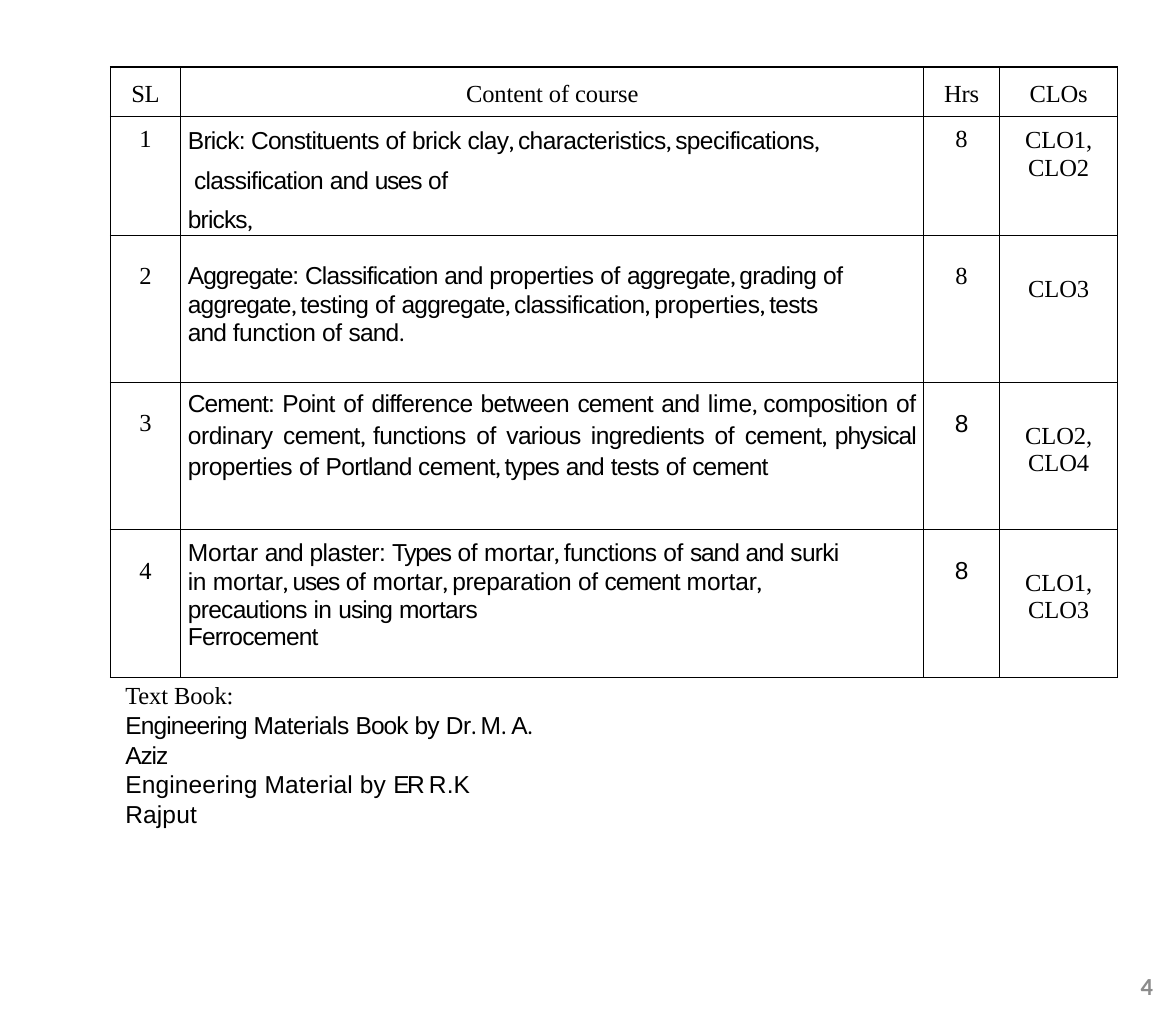
from dataclasses import dataclass

from lxml.etree import SubElement
from pptx import Presentation
from pptx.dml.color import RGBColor
from pptx.enum.text import PP_ALIGN
from pptx.oxml.ns import qn
from pptx.util import Inches, Pt


@dataclass(frozen=True)
class Theme:
    """Colours, fonts and type size of the slide."""
    ink: str = "000000"
    muted: str = "8C8C8C"
    serif: str = "Times New Roman"
    sans: str = "Arial"
    marks: str = "Cambria"
    number: str = "Calibri"
    size: float = 20
    rule: float = 1


THEME = Theme()
COLUMNS = [0.8, 8.42, 0.86, 1.34]
ROWS = [0.56, 1.35, 1.67, 1.67, 1.67]
HEADINGS = [("SL", -0.3), ("Content of course", -0.1), ("Hrs", -0.2), ("CLOs", -0.2)]

BRICK = [
    [("Brick: Constituents ", -0.6), ("of ", -0.3), ("brick ", -0.5), ("clay, ", -0.6),
     ("characteristics, ", -0.5), ("specifications,", -0.5)],
    [("classification ", -0.6), ("and ", -0.8), ("uses ", -1.1), ("of", -0.3)],
    [("bricks,", -0.7)],
]
AGGREGATE = [
    [("Aggregate: ", -0.8), ("Classification ", -0.7), ("and ", -0.8), ("properties ", -0.4),
     ("of ", -0.3), ("aggregate, ", -0.7), ("grading ", -0.6), ("of ", -0.3),
     ("aggregate, ", -0.7), ("testing ", -0.5), ("of ", -0.3), ("aggregate, ", -0.7),
     ("classification, ", -0.5), ("properties, ", -0.3), ("tests ", -0.6), ("and ", -0.8),
     ("function of ", -0.3), ("sand.", -0.7)],
]
CEMENT = [
    [("Cement: ", -0.8), ("Point ", -0.6), ("of ", -0.3), ("difference between ", -0.5),
     ("cement ", -0.7), ("and ", -0.8), ("lime, ", -0.2), ("composition ", -0.5),
     ("of ", -0.3), ("ordinary ", -0.4), ("cement, ", -0.5), ("functions ", -0.5),
     ("of ", -0.3), ("various ", -0.6), ("ingredients ", -0.5), ("of ", -0.3),
     ("cement, ", -0.5), ("physical ", -0.8), ("properties ", -0.4), ("of ", -0.3),
     ("Portland cement, ", -0.5), ("types ", -0.7), ("and ", -0.8), ("tests ", -0.6),
     ("of ", -0.3), ("cement", -0.7)],
]
MORTAR = [
    [("Mortar ", -0.1), ("and ", -0.8), ("plaster: ", -0.5), ("Types ", -1.1), ("of ", -0.3),
     ("mortar, ", -0.1), ("functions ", -0.5), ("of ", -0.3), ("sand ", -0.9), ("and ", -0.8),
     ("surki ", -0.6), ("in ", -0.4), ("mortar, ", -0.1), ("uses ", -1.1), ("of ", -0.3),
     ("mortar, ", -0.1), ("preparation ", -0.4), ("of ", -0.3), ("cement ", -0.7),
     ("mortar, ", -0.1), ("precautions ", -0.6), ("in ", -0.5), ("using ", -0.8),
     ("mortars", -0.6)],
    [("Ferrocement", -0.7)],
]
BOOKS = [
    [("Engineering ", -0.7), ("Materials ", -0.4), ("Book ", -0.8), ("by ", -0.6),
     ("Dr. ", -0.3), ("M. ", 0.1), ("A. ", -0.5), ("Aziz", -0.9)],
    [("Engineering Material by ", 0.1), ("ER ", -2.2), ("R.K Rajput", 0.1)],
]


@dataclass(frozen=True)
class Topic:
    """One course topic with its hours, outcomes and cell offsets."""
    lines: list
    outcomes: str
    top: float
    right: float = 0.7
    number_top: float = 0.31
    outcome_top: float = 0.45
    hours_font: str = THEME.serif
    align: PP_ALIGN = PP_ALIGN.LEFT
    spacing: float | None = None


TOPICS = [
    Topic(BRICK, "CLO1, CLO2", 0.22, right=0, number_top=0.1, outcome_top=0.12),
    Topic(AGGREGATE, "CLO3", 0.31),
    Topic(CEMENT, "CLO2, CLO4", 0.06, right=0.09, hours_font=THEME.sans,
          align=PP_ALIGN.JUSTIFY, spacing=1.1),
    Topic(MORTAR, "CLO1, CLO3", 0.11, hours_font=THEME.sans),
]


def add_span(para, text, font, tracking=0, color=THEME.ink, bold=False):
    """Add one run with its font, colour and letter spacing."""
    span = para.add_run()
    span.text = text
    span.font.name, span.font.size, span.font.bold = font, Pt(THEME.size), bold
    span.font.color.rgb = RGBColor.from_string(color)
    span.font._element.set("spc", str(round(tracking * 100)))


def add_words(para, words):
    """Add sans words, each followed by its punctuation in the marks font."""
    for text, tracking in words:
        body = text.rstrip(" ,.")
        tail = text[len(body):]
        if tail.strip():
            add_span(para, body, THEME.sans, tracking)
            add_span(para, tail, THEME.marks, tracking)
        else:
            add_span(para, text, THEME.sans, tracking)


def add_paras(frame, count):
    """Return the given number of paragraphs, starting with the first of the frame."""
    return [frame.paragraphs[0]] + [frame.add_paragraph() for _ in range(count - 1)]


def format_cell(cell, top, left=0, right=0):
    """Give a cell its margins, black borders and empty fill."""
    cell.margin_left, cell.margin_right = Inches(left), Inches(right)
    cell.margin_top, cell.margin_bottom = Inches(top), 0
    properties = cell._tc.get_or_add_tcPr()
    for side in ("lnL", "lnR", "lnT", "lnB"):
        line = SubElement(properties, qn(f"a:{side}"), w=str(Pt(THEME.rule)))
        fill = SubElement(line, qn("a:solidFill"))
        SubElement(fill, qn("a:srgbClr"), val=THEME.ink)
    cell.fill.background()


def fill_label(cell, text, top, font=THEME.serif, tracking=0, spacing=None):
    """Write a centred label into a cell."""
    format_cell(cell, top)
    para = cell.text_frame.paragraphs[0]
    para.alignment = PP_ALIGN.CENTER
    para.line_spacing = spacing
    add_span(para, text, font, tracking)


def fill_topic(cell, topic):
    """Write the course content of a topic into a cell."""
    format_cell(cell, topic.top, left=0.08, right=topic.right)
    paras = add_paras(cell.text_frame, len(topic.lines))
    for index, (para, words) in enumerate(zip(paras, topic.lines)):
        para.alignment = topic.align
        para.line_spacing = topic.spacing
        if topic.lines is BRICK:
            para.line_spacing = Pt(16.1)
            if index:
                para.space_before = Pt(16.1)
            if index == 1:
                para._p.get_or_add_pPr().set("marL", str(Inches(0.07)))
        add_words(para, words)


def add_course_table(page, left, top):
    """Draw the course table from its top left corner."""
    table = page.shapes.add_table(
        len(ROWS), len(COLUMNS), Inches(left), Inches(top),
        Inches(sum(COLUMNS)), Inches(sum(ROWS))).table
    table.first_row = table.horz_banding = False
    for column, width in zip(table.columns, COLUMNS):
        column.width = Inches(width)
    for row, height in zip(table.rows, ROWS):
        row.height = Inches(height)
    for index, (text, tracking) in enumerate(HEADINGS):
        fill_label(table.cell(0, index), text, 0.23, tracking=tracking, spacing=Pt(16.4))
    for number, topic in enumerate(TOPICS, 1):
        fill_label(table.cell(number, 0), str(number), topic.number_top)
        fill_topic(table.cell(number, 1), topic)
        fill_label(table.cell(number, 2), "8", topic.number_top, topic.hours_font)
        fill_label(table.cell(number, 3), topic.outcomes, topic.outcome_top, tracking=-0.1)


def add_text_box(page, left, top, width, height, inset=0):
    """Add a wrapping text box and return its frame."""
    box = page.shapes.add_textbox(Inches(left), Inches(top), Inches(width), Inches(height))
    frame = box.text_frame
    frame.word_wrap = True
    frame.margin_left = frame.margin_right = frame.margin_bottom = 0
    frame.margin_top = Inches(inset)
    return frame


def add_books(page, left, top, width, height):
    """List the text books below the table."""
    frame = add_text_box(page, left, top, width, height, inset=0.03)
    heading, *entries = add_paras(frame, len(BOOKS) + 1)
    add_span(heading, "Text Book:", THEME.serif, -0.1)
    for para, words in zip(entries, BOOKS):
        add_words(para, words)
    entries[0].space_before = Pt(0.9)


def add_page_number(page, left, top, width, height):
    """Write the page number, aligned right."""
    para = add_text_box(page, left, top, width, height).paragraphs[0]
    para.alignment = PP_ALIGN.RIGHT
    add_span(para, "4", THEME.number, color=THEME.muted, bold=True)


def main():
    """Build and save the deck."""
    deck = Presentation()
    deck.slide_width, deck.slide_height = Inches(13.33), Inches(11.69)
    page = deck.slides.add_slide(deck.slide_layouts[6])
    add_course_table(page, 1.25, 0.76)
    add_books(page, 1.42, 7.68, 4.75, 1.39)
    add_page_number(page, 12.42, 11.01, 0.65, 0.34)
    deck.save("out.pptx")


if __name__ == "__main__":
    main()
